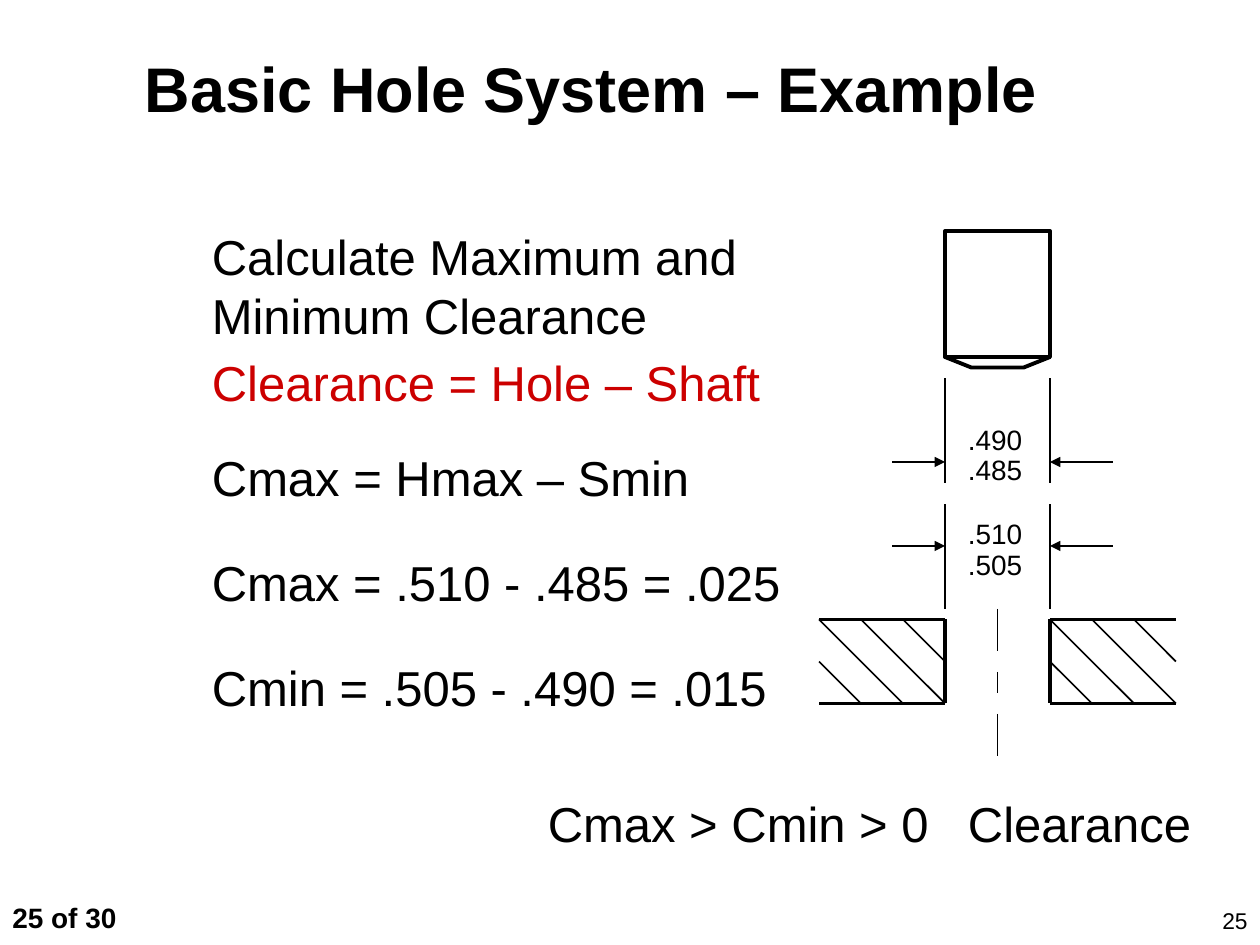
from lxml import etree
from pptx import Presentation
from pptx import util as u
from pptx.dml.color import RGBColor
from pptx.enum import shapes, text
from pptx.oxml import ns

BLACK = RGBColor(0, 0, 0)
WHITE = RGBColor(255, 255, 255)
RED = RGBColor(0xCC, 0, 0)
FONT = "Arial"
THIN, THICK = 1, 2.25
LEFT, RIGHT = 90, 100
TOP, BASE = 59, 67
PLATE, STEP = 12, 4


def grid(n):
    """Turn grid units, twelve to the inch, into a length."""
    return u.Inches(n / 12)


def write(slide, box, lines, size=28, color=BLACK, bold=False, align=None,
          space=None, gap=0, anchor=text.MSO_ANCHOR.TOP, tab=None):
    """Place a wrapped text box, one paragraph for each line."""
    frame = slide.shapes.add_textbox(*map(grid, box)).text_frame
    frame.word_wrap = True
    frame.vertical_anchor = anchor
    for i, line in enumerate(lines):
        para = frame.paragraphs[0] if i == 0 else frame.add_paragraph()
        para.text = line
        para.alignment = align
        if space:
            para.line_spacing = space
        if i:
            para.space_before = u.Pt(gap)
        if tab:
            stops = etree.SubElement(para._p.get_or_add_pPr(), ns.qn("a:tabLst"))
            etree.SubElement(stops, ns.qn("a:tab"), pos=str(grid(tab)), algn="l")
        font = para.font
        font.name, font.size, font.bold = FONT, u.Pt(size), bold
        font.color.rgb = color


def rule(slide, x1, y1, x2, y2, width=THIN, arrow=False):
    """Draw a straight line, with an arrowhead at its end if asked."""
    line = slide.shapes.add_connector(
        shapes.MSO_CONNECTOR.STRAIGHT, *map(grid, (x1, y1, x2, y2)))
    line.line.color.rgb = BLACK
    line.line.width = u.Pt(width)
    if arrow:
        etree.SubElement(line.line._get_or_add_ln(), ns.qn("a:tailEnd"), type="triangle")
    etree.SubElement(line._element.spPr, ns.qn("a:effectLst"))


def style(shape):
    """Give a solid part its white fill and thick outline."""
    shape.shadow.inherit = False
    shape.fill.solid()
    shape.fill.fore_color.rgb = WHITE
    shape.line.color.rgb = BLACK
    shape.line.width = u.Pt(THICK)


def plate(slide, left, wall):
    """Draw one hatched side of the hole."""
    for y in (TOP, BASE):
        rule(slide, left, y, left + PLATE, y, THICK)
    rule(slide, wall, TOP, wall, BASE, THICK)
    deep = BASE - TOP
    for x in range(-STEP, PLATE, STEP):
        start, end = max(x, 0), min(x + deep, PLATE)
        rule(slide, left + start, TOP + start - x, left + end, TOP + end - x)


def shaft(slide):
    """Draw the shaft and its chamfered end."""
    wide = RIGHT - LEFT
    style(slide.shapes.add_shape(
        shapes.MSO_SHAPE.RECTANGLE, *map(grid, (LEFT, 22, wide, 12))))
    path = slide.shapes.build_freeform(grid(LEFT), grid(34))
    path.add_line_segments(
        [(grid(x), grid(y)) for x, y in ((92.5, 35), (97.5, 35), (RIGHT, 34))], close=True)
    style(path.convert_to_shape())


def size(slide, top, label, limits):
    """Draw a dimension with its upper and lower limits."""
    for edge, far in ((LEFT, 85), (RIGHT, 106)):
        rule(slide, edge, top, edge, top + 10)
        rule(slide, far, label[1], edge, label[1], arrow=True)
    write(slide, (91, label[0], 8, 6), limits, 16, space=0.5, gap=8)


def main():
    """Build the slide."""
    deck = Presentation()
    deck.slide_width, deck.slide_height = u.Inches(10), u.Inches(7.5)
    slide = deck.slides.add_slide(deck.slide_layouts[6])

    write(slide, (0, 85.2, 15, 4.4), ["25 of 30"], 16, bold=True)
    write(slide, (12.6, 0.8, 105.4, 15), ["Basic Hole System – Example"], 36,
          bold=True, anchor=text.MSO_ANCHOR.MIDDLE)
    write(slide, (112.6, 85.8, 7.4, 4.2), ["25"], 13, align=text.PP_ALIGN.RIGHT)

    plate(slide, LEFT - PLATE, LEFT)
    plate(slide, RIGHT, RIGHT)
    shaft(slide)
    size(slide, 36, (41, 44), [".490", ".485"])
    size(slide, 48, (50, 52), [".510", ".505"])
    mid = (LEFT + RIGHT) / 2
    for y1, y2 in ((58, 62), (64, 66), (68, 72)):
        rule(slide, mid, y1, mid, y2)

    for y, wide, line, color in (
            (21, 66, "Calculate Maximum and Minimum Clearance", BLACK),
            (33, 55, "Clearance = Hole – Shaft", RED),
            (42, 51, "Cmax = Hmax – Smin", BLACK),
            (52, 61, "Cmax = .510 - .485 = .025", BLACK),
            (62, 59, "Cmin = .505 - .490 = .015", BLACK)):
        write(slide, (19, y, wide, 6.8), [line], color=color)
    write(slide, (51, 75, 69, 6.8), ["Cmax > Cmin > 0\tClearance"], tab=40)

    deck.save("out.pptx")


if __name__ == "__main__":
    main()
